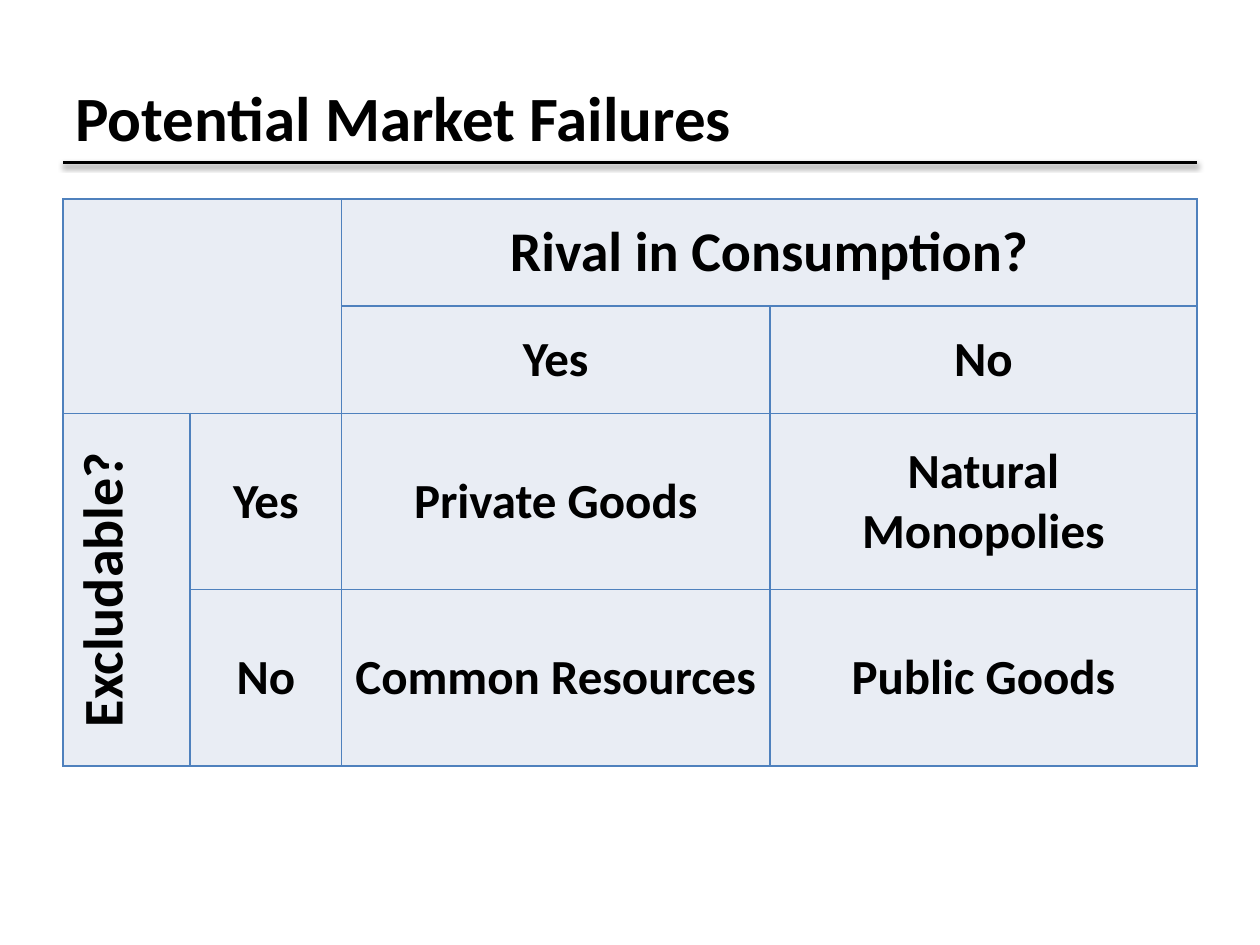
from pptx import Presentation
from pptx.dml.color import RGBColor
from pptx.enum import shapes, text
from pptx.oxml import parse_xml
from pptx.oxml.ns import nsdecls
from pptx.util import Inches, Pt

# Content: None marks a place covered by a merged cell
TITLE = "Potential Market Failures"
ROWS = [
    ["", None, "Rival in Consumption?", None],
    [None, None, "Yes", "No"],
    ["Excludable?", "Yes", "Private Goods", "Natural Monopolies"],
    [None, "No", "Common Resources", "Public Goods"],
]
MERGES = [((0, 0), (1, 1)), ((0, 2), (0, 3)), ((2, 0), (3, 0))]
AXIS_LABELS = {"Rival in Consumption?", "Excludable?"}
COLUMN_WIDTHS = [1.01, 1.2, 3.4, 3.39]
ROW_HEIGHTS = [0.85, 0.85, 1.4, 1.4]
COLORS = {"ink": "000000", "cell": "E9EDF4", "border": "4F81BD"}
FONT = "Calibri"
LEFT, WIDTH = 0.5, 9


def style_paragraph(paragraph, size, alignment):
    paragraph.alignment = alignment
    font = paragraph.font
    font.name, font.size, font.bold = FONT, Pt(size), True
    font.color.rgb = RGBColor.from_string(COLORS["ink"])


def style_cell(cell):
    properties = cell._tc.get_or_add_tcPr()
    for side in ("lnL", "lnR", "lnT", "lnB"):
        properties.append(parse_xml(
            f'<a:{side} {nsdecls("a")} w="{Pt(1)}"><a:solidFill>'
            f'<a:srgbClr val="{COLORS["border"]}"/></a:solidFill></a:{side}>'))
    cell.fill.solid()
    cell.fill.fore_color.rgb = RGBColor.from_string(COLORS["cell"])
    cell.vertical_anchor = text.MSO_ANCHOR.MIDDLE


presentation = Presentation()
presentation.slide_width, presentation.slide_height = Inches(10), Inches(7.5)
slide = presentation.slides.add_slide(presentation.slide_layouts[6])

# Title rule with its soft shadow
rule = slide.shapes.add_connector(
    shapes.MSO_CONNECTOR.STRAIGHT,
    Inches(LEFT), Inches(1.29), Inches(LEFT + WIDTH), Inches(1.29))
rule.line.width = Pt(2)
rule.line.color.rgb = RGBColor.from_string(COLORS["ink"])
rule._element.spPr.append(parse_xml(
    f'<a:effectLst {nsdecls("a")}><a:outerShdw blurRad="{Pt(3.1)}" '
    f'dist="{Pt(1.6)}" dir="5400000" rotWithShape="0">'
    f'<a:srgbClr val="{COLORS["ink"]}"><a:alpha val="38000"/></a:srgbClr>'
    '</a:outerShdw></a:effectLst>'))

# Goods matrix
table = slide.shapes.add_table(
    len(ROWS), len(COLUMN_WIDTHS), Inches(LEFT), Inches(1.58),
    Inches(WIDTH), Inches(sum(ROW_HEIGHTS))).table
table.first_row = table.horz_banding = False
for column, width in zip(table.columns, COLUMN_WIDTHS):
    column.width = Inches(width)
for row, height in zip(table.rows, ROW_HEIGHTS):
    row.height = Inches(height)
for start, end in MERGES:
    table.cell(*start).merge(table.cell(*end))
for row, labels in zip(table.rows, ROWS):
    for cell, label in zip(row.cells, labels):
        if label is None:
            continue
        style_cell(cell)
        if label:
            cell.text = label
            style_paragraph(cell.text_frame.paragraphs[0],
                            32 if label in AXIS_LABELS else 28,
                            text.PP_ALIGN.CENTER)
table.cell(2, 0)._tc.get_or_add_tcPr().set("vert", "vert270")

# Title
title = slide.shapes.add_textbox(
    Inches(LEFT), Inches(0.3), Inches(WIDTH), Inches(1.25))
frame = title.text_frame
frame.word_wrap = True
frame.vertical_anchor = text.MSO_ANCHOR.MIDDLE
frame.text = TITLE
style_paragraph(frame.paragraphs[0], 36, text.PP_ALIGN.LEFT)

presentation.save("out.pptx")
